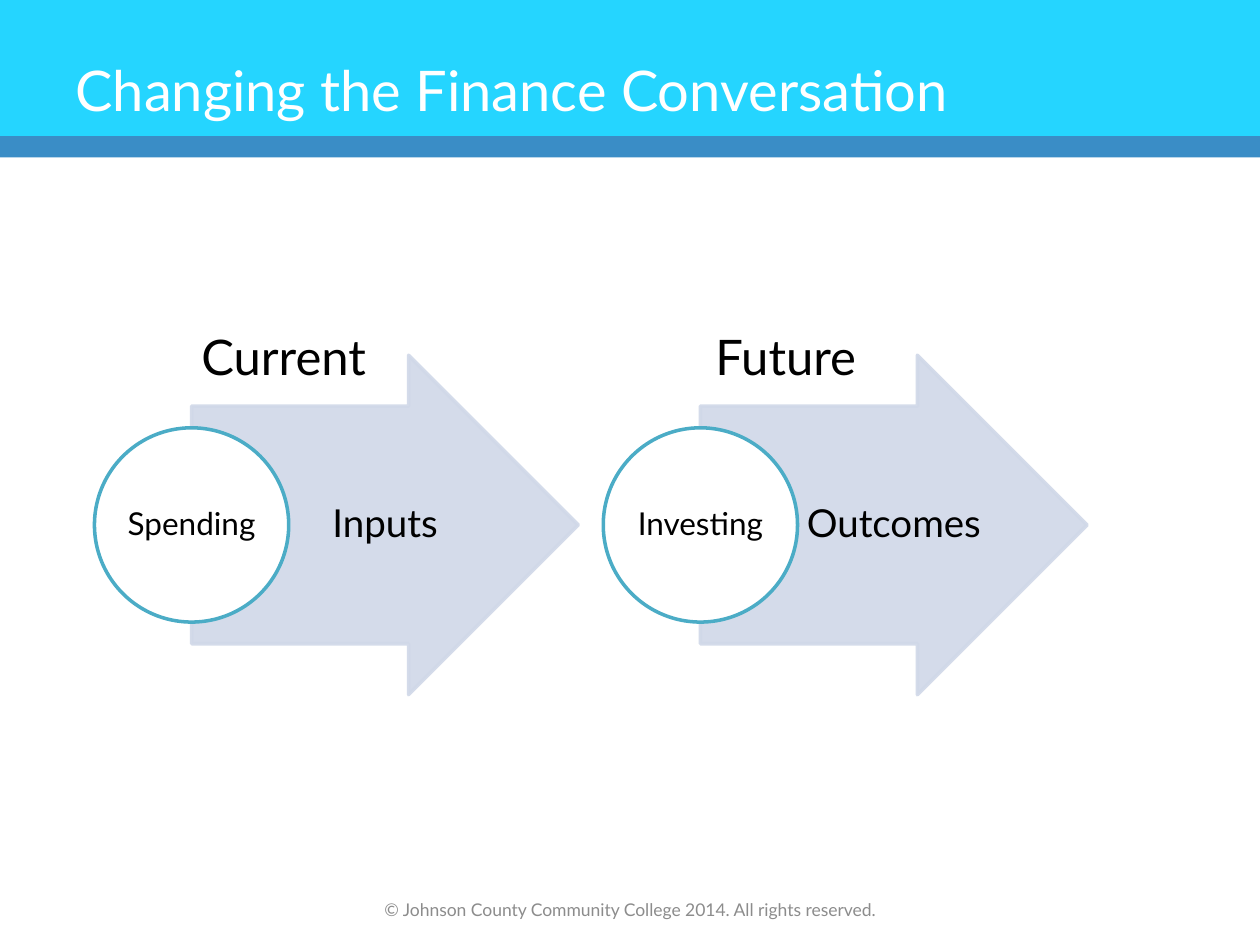
from dataclasses import dataclass

from lxml import etree
from pptx import Presentation
from pptx.dml.color import RGBColor
from pptx.enum import shapes, text
from pptx.oxml import ns
from pptx.util import Pt


@dataclass(frozen=True)
class Theme:
    font: str = "Lato"
    banner: str = "25D5FF"
    stripe: str = "3A8DC6"
    arrow: str = "D0D8E8"
    ring: str = "4BACC6"
    white: str = "FFFFFF"
    ink: str = "000000"
    muted: str = "8C8C8C"
    title_size: int = 32
    heading_size: int = 28
    result_size: int = 22
    action_size: int = 18
    footer_size: int = 10


THEME = Theme()
SHAPE = shapes.MSO_SHAPE
ALIGN = text.PP_ALIGN
ANCHOR = text.MSO_ANCHOR


def set_alpha(fill_parent, percent):
    for color in fill_parent.findall(ns.qn("a:solidFill") + "/" + ns.qn("a:srgbClr")):
        etree.SubElement(color, ns.qn("a:alpha"), val=str(percent * 1000))


def add_shape(s, kind, box, fill, line=None, alpha=None):
    sp = s.shapes.add_shape(kind, *map(Pt, box))
    sp.shadow.inherit = False
    sp.fill.solid()
    sp.fill.fore_color.rgb = RGBColor.from_string(fill)
    if line:
        sp.line.color.rgb = RGBColor.from_string(line)
        sp.line.width = Pt(2)
    else:
        sp.line.fill.background()
    if alpha:
        props = sp.fill._xPr
        set_alpha(props, alpha)
        set_alpha(props.find(ns.qn("a:ln")), alpha)
    return sp


def add_text(s, words, box, size, color=THEME.ink, align=ALIGN.LEFT,
             anchor=ANCHOR.MIDDLE, insets=(7.2, 3.6, 7.2, 3.6), wrap=True, spacing=None):
    tf = s.shapes.add_textbox(*map(Pt, box)).text_frame
    tf.word_wrap = wrap
    tf.vertical_anchor = anchor
    tf.margin_left, tf.margin_top, tf.margin_right, tf.margin_bottom = map(Pt, insets)
    p = tf.paragraphs[0]
    p.alignment = align
    if spacing:
        p.line_spacing = spacing
    r = p.add_run()
    r.text = words
    r.font.name = THEME.font
    r.font.size = Pt(size)
    r.font.color.rgb = RGBColor.from_string(color)


def add_banner(s, box, title):
    x, y, w, h = box
    stripe_h = 12.25
    add_shape(s, SHAPE.RECTANGLE, (x, y, w, h - stripe_h), THEME.banner)
    add_shape(s, SHAPE.RECTANGLE, (x, y + h - stripe_h, w, stripe_h), THEME.stripe)
    add_text(s, title, (x + 36, y + 6, w - 72, h), THEME.title_size, THEME.white)


def add_stage(s, box, action, result):
    x, y, w, h = box
    d = 111
    arrow_x, circle_y = x + d / 2, y + (h - d) / 2
    arrow = add_shape(s, SHAPE.RIGHT_ARROW, (arrow_x, y, w - d / 2, h),
                      THEME.arrow, THEME.arrow, alpha=90)
    arrow.adjustments[0], arrow.adjustments[1] = 0.7, 0.5
    add_text(s, result, (x + d, y + h * 0.15, 108, h * 0.7), THEME.result_size,
             align=ALIGN.CENTER, insets=(4.2, 1.4, 2.1, 1.4), spacing=0.9)
    add_shape(s, SHAPE.OVAL, (x, circle_y, d, d), THEME.white, THEME.ring)
    pad = 16.25
    add_text(s, action, (x + pad, circle_y + pad, d - 2 * pad, d - 2 * pad),
             THEME.action_size, align=ALIGN.CENTER, insets=(0.7,) * 4, spacing=0.9)


def add_flow(s, box, stages):
    x, y, w, h = box
    stage_w, pitch = 276.5, 290.75
    for i, (heading, indent, action, result) in enumerate(stages):
        left = x + i * pitch
        add_stage(s, (left, y, stage_w, h), action, result)
    for i, (heading, indent, action, result) in enumerate(stages):
        add_text(s, heading, (x + i * pitch + indent, y - 20, 114, 41),
                 THEME.heading_size, anchor=ANCHOR.TOP, wrap=False)


def add_footer(s, box, words):
    add_text(s, words, box, THEME.footer_size, THEME.muted, ALIGN.CENTER, ANCHOR.BOTTOM)


def main():
    prs = Presentation()
    prs.slide_width, prs.slide_height = Pt(720), Pt(540)
    s = prs.slides.add_slide(prs.slide_layouts[6])
    add_banner(s, (0, 0, 720, 90), "Changing the Finance Conversation")
    add_flow(s, (54, 203, 567.25, 194), [
        ("Current", 54, "Spending", "Inputs"),
        ("Future", 57, "Investing", "Outcomes"),
    ])
    add_footer(s, (183, 500.5, 354, 28.75),
               "© Johnson County Community College 2014. All rights reserved.")
    prs.save("out.pptx")


if __name__ == "__main__":
    main()
